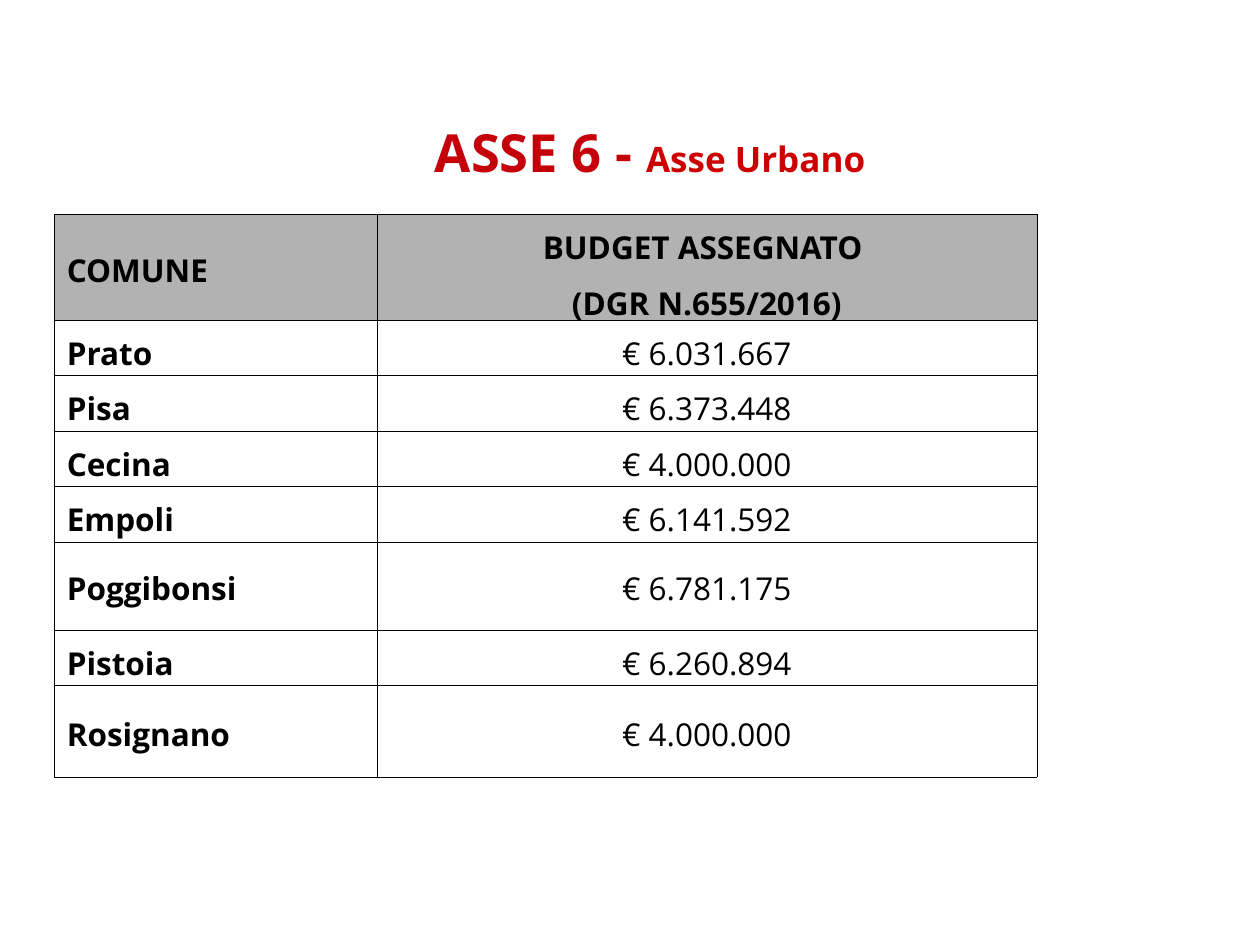
import dataclasses

import lxml.etree
import pptx
import pptx.dml.color
import pptx.enum.text
import pptx.oxml.ns
import pptx.util

Inches = pptx.util.Inches
Pt = pptx.util.Pt
ALIGN = pptx.enum.text.PP_ALIGN


@dataclasses.dataclass(frozen=True)
class Theme:
    font: str = "Open Sans"
    axis_color: str = "C5000B"
    name_color: str = "CC0000"
    ink: str = "000000"
    header_fill: str = "B2B2B2"
    axis_size: int = 30
    name_size: int = 20
    table_size: int = 18
    line_spacing: float = 1.13
    header_border: float = 0.11
    rule: float = 0.45
    border: float = 0.06


THEME = Theme()
COLUMNS = [2.56, 5.24]
HEADER = ["COMUNE", "BUDGET ASSEGNATO \n(DGR N.655/2016)"]
HEADER_HEIGHT = 0.73
BUDGETS = [
    ("Prato", "€ 6.031.667", 0.43),
    ("Pisa", "€ 6.373.448", 0.43),
    ("Cecina", "€ 4.000.000", 0.42),
    ("Empoli", "€ 6.141.592", 0.4),
    ("Poggibonsi", "€ 6.781.175", 0.7),
    ("Pistoia", "€ 6.260.894", 0.43),
    ("Rosignano", "€ 4.000.000", 0.73),
]


def rgb(value):
    return pptx.dml.color.RGBColor.from_string(value)


def add_title(slide, parts):
    """Add a one-line centred title from (text, size, color) parts."""
    sp = slide.shapes.add_textbox(Inches(3.35), Inches(0.84), Inches(3.62), Inches(0.6))
    tf = sp.text_frame
    tf.word_wrap = False
    tf.auto_size = pptx.enum.text.MSO_AUTO_SIZE.SHAPE_TO_FIT_TEXT
    p = tf.paragraphs[0]
    p.alignment = ALIGN.CENTER
    p.line_spacing = THEME.line_spacing
    p.space_after = Pt(14.2)
    p.font.name = THEME.font
    p.font.bold = True
    for text, size, color in parts:
        r = p.add_run()
        r.text = text
        r.font.size = Pt(size)
        r.font.color.rgb = rgb(color)


def set_borders(cell, sides, top, bottom):
    """Draw the four cell borders, with widths in points."""
    tc_pr = cell._tc.get_or_add_tcPr()
    qn = pptx.oxml.ns.qn
    for tag, width in (("a:lnL", sides), ("a:lnR", sides), ("a:lnT", top), ("a:lnB", bottom)):
        ln = lxml.etree.SubElement(tc_pr, qn(tag), w=str(int(Pt(width))))
        fill = lxml.etree.SubElement(ln, qn("a:solidFill"))
        lxml.etree.SubElement(fill, qn("a:srgbClr"), val=THEME.ink)


def fill_cell(cell, text, bold, alignment):
    cell.vertical_anchor = pptx.enum.text.MSO_ANCHOR.MIDDLE
    tf = cell.text_frame
    tf.text = text
    for i, p in enumerate(tf.paragraphs):
        p.alignment = alignment
        p.line_spacing = THEME.line_spacing
        if i:
            p.space_before = Pt(4.5)
        p.font.name = THEME.font
        p.font.size = Pt(THEME.table_size)
        p.font.bold = bold
        p.font.color.rgb = rgb(THEME.ink)


def add_budget_table(slide):
    rows = [(*HEADER, HEADER_HEIGHT)] + BUDGETS
    height = sum(row[-1] for row in rows)
    frame = slide.shapes.add_table(
        len(rows), len(COLUMNS), Inches(0.43), Inches(1.7), Inches(sum(COLUMNS)), Inches(height)
    )
    table = frame.table
    for column, width in zip(table.columns, COLUMNS):
        column.width = Inches(width)

    for i, (*texts, row_height) in enumerate(rows):
        table.rows[i].height = Inches(row_height)
        is_header = i == 0
        for j, text in enumerate(texts):
            cell = table.cell(i, j)
            fill_cell(cell, text, is_header or j == 0, ALIGN.CENTER if j else ALIGN.LEFT)
            # Borders come before the fill in the cell properties
            if is_header:
                set_borders(cell, THEME.header_border, THEME.header_border, THEME.rule)
                cell.fill.solid()
                cell.fill.fore_color.rgb = rgb(THEME.header_fill)
            else:
                set_borders(cell, THEME.border, THEME.rule if i == 1 else THEME.border, THEME.border)
                cell.fill.background()


def main():
    prs = pptx.Presentation()
    prs.slide_width = Inches(10)
    prs.slide_height = Inches(7.5)
    slide = prs.slides.add_slide(prs.slide_layouts[6])

    # Title
    add_title(slide, [
        ("ASSE 6 - ", THEME.axis_size, THEME.axis_color),
        ("Asse Urbano", THEME.name_size, THEME.name_color),
    ])

    # Budget by municipality
    add_budget_table(slide)

    prs.save("out.pptx")


if __name__ == "__main__":
    main()
